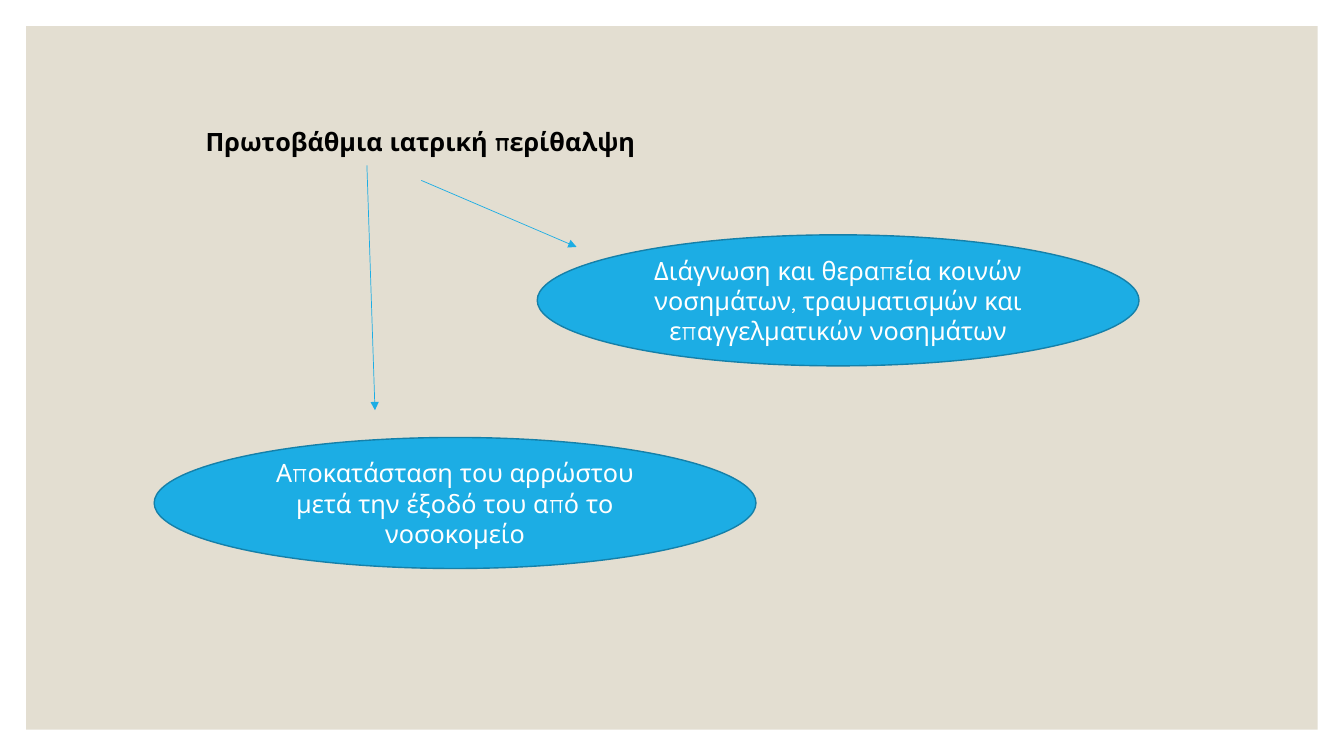
import dataclasses

import lxml.etree
import pptx
import pptx.dml.color
import pptx.enum.shapes
import pptx.enum.text
import pptx.oxml.ns
import pptx.shapes.autoshape
import pptx.slide
import pptx.text.text
import pptx.util

COLUMNS, ROWS = 160, 90
SLIDE_WIDTH, SLIDE_HEIGHT = pptx.util.Inches(13.33), pptx.util.Inches(7.5)
FRAME_MARGIN = 3.12
OVAL_WIDTH, OVAL_HEIGHT = 71.64, 15.6
FONT = "Quicksand"
BLUE, DARK_BLUE, SAND = "1CADE4", "1580A9", "E3DED1"


@dataclasses.dataclass(frozen=True)
class Oval:
    text: str
    column: float
    row: float


@dataclasses.dataclass(frozen=True)
class Arrow:
    start: tuple[float, float]
    end: tuple[float, float]


OVALS = [
    Oval("Διάγνωση και θεραπεία κοινών νοσημάτων, τραυματισμών και επαγγελματικών νοσημάτων", 63.96, 27.96),
    Oval("Αποκατάσταση του αρρώστου μετά την έξοδό του από το νοσοκομείο", 18.36, 52.08),
]
ARROWS = [
    Arrow((50.16, 21.48), (68.64, 29.4)),
    Arrow((43.68, 19.68), (44.64, 48.84)),
]


def across(columns: float) -> int:
    return round(SLIDE_WIDTH * columns / COLUMNS)


def down(rows: float) -> int:
    return round(SLIDE_HEIGHT * rows / ROWS)


def color(value: str) -> pptx.dml.color.RGBColor:
    return pptx.dml.color.RGBColor.from_string(value)


def write(frame: pptx.text.text.TextFrame, text: str, *, font_color: str, bold: bool = False,
          align: pptx.enum.text.PP_ALIGN = pptx.enum.text.PP_ALIGN.LEFT,
          anchor: pptx.enum.text.MSO_ANCHOR = pptx.enum.text.MSO_ANCHOR.MIDDLE):
    frame.word_wrap = True
    frame.auto_size = pptx.enum.text.MSO_AUTO_SIZE.NONE
    frame.vertical_anchor = anchor
    paragraph = frame.paragraphs[0]
    paragraph.alignment = align
    paragraph.space_before = pptx.util.Pt(0)
    run = paragraph.add_run()
    run.text = text
    run.font.name = FONT
    run.font.size = pptx.util.Pt(18)
    run.font.bold = bold
    run.font.color.rgb = color(font_color)
    return paragraph


def draw_shape(slide: pptx.slide.Slide, kind: pptx.enum.shapes.MSO_SHAPE, column: float, row: float,
               width: float, height: float, fill: str,
               outline: str | None = None) -> pptx.shapes.autoshape.Shape:
    shape = slide.shapes.add_shape(kind, across(column), down(row), across(width), down(height))
    shape.shadow.inherit = False
    shape.fill.solid()
    shape.fill.fore_color.rgb = color(fill)
    if outline:
        shape.line.color.rgb = color(outline)
        shape.line.width = pptx.util.Pt(1)
    else:
        shape.line.fill.background()
    return shape


def draw_frame(slide: pptx.slide.Slide) -> None:
    frame = draw_shape(slide, pptx.enum.shapes.MSO_SHAPE.RECTANGLE, FRAME_MARGIN, FRAME_MARGIN,
                       COLUMNS - 2 * FRAME_MARGIN, ROWS - 2 * FRAME_MARGIN, SAND)
    slide.shapes.element.insert(2, frame.element)


def draw_heading(slide: pptx.slide.Slide) -> None:
    body = slide.placeholders[1]
    body.left, body.top = across(22.8), down(3.72)
    body.width, body.height = across(114.36), down(82.56)
    body.text_frame.margin_top = down(11.28)
    paragraph = write(body.text_frame, "Πρωτοβάθμια ιατρική περίθαλψη", font_color="000000",
                      bold=True, anchor=pptx.enum.text.MSO_ANCHOR.TOP)
    properties = paragraph._p.get_or_add_pPr()
    properties.set("marL", str(across(0.48)))
    properties.set("indent", "0")
    lxml.etree.SubElement(properties, pptx.oxml.ns.qn("a:buNone"))


def draw_oval(slide: pptx.slide.Slide, oval: Oval) -> None:
    shape = draw_shape(slide, pptx.enum.shapes.MSO_SHAPE.OVAL, oval.column, oval.row,
                       OVAL_WIDTH, OVAL_HEIGHT, BLUE, DARK_BLUE)
    write(shape.text_frame, oval.text, font_color="FFFFFF", align=pptx.enum.text.PP_ALIGN.CENTER)


def draw_arrow(slide: pptx.slide.Slide, arrow: Arrow) -> None:
    connector = slide.shapes.add_connector(
        pptx.enum.shapes.MSO_CONNECTOR.STRAIGHT,
        across(arrow.start[0]), down(arrow.start[1]), across(arrow.end[0]), down(arrow.end[1]))
    connector.line.color.rgb = color(BLUE)
    connector.line.width = pptx.util.Pt(0.5)
    properties = connector.element.spPr
    line = properties.find(pptx.oxml.ns.qn("a:ln"))
    lxml.etree.SubElement(line, pptx.oxml.ns.qn("a:tailEnd"), type="triangle")
    lxml.etree.SubElement(properties, pptx.oxml.ns.qn("a:effectLst"))


def main() -> None:
    presentation = pptx.Presentation()
    presentation.slide_width, presentation.slide_height = SLIDE_WIDTH, SLIDE_HEIGHT
    slide = presentation.slides.add_slide(presentation.slide_layouts[1])
    title = slide.shapes.title.element
    title.getparent().remove(title)
    draw_frame(slide)
    draw_heading(slide)
    for oval in OVALS:
        draw_oval(slide, oval)
    for arrow in ARROWS:
        draw_arrow(slide, arrow)
    presentation.save("out.pptx")


if __name__ == "__main__":
    main()
